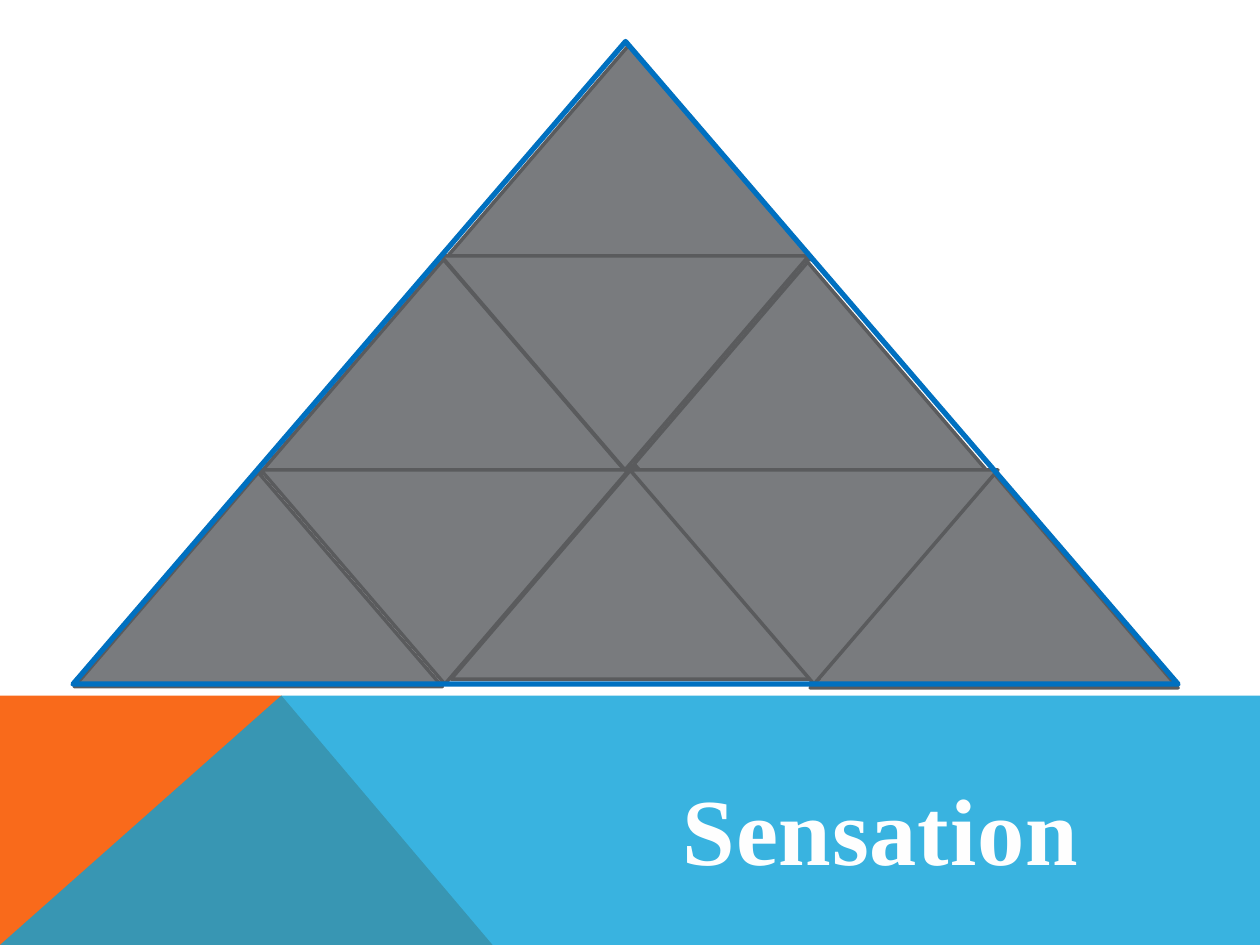
from lxml.etree import SubElement
from pptx import Presentation
from pptx.dml.color import RGBColor
from pptx.enum.shapes import MSO_SHAPE
from pptx.enum.text import MSO_ANCHOR, MSO_AUTO_SIZE, PP_ALIGN
from pptx.oxml.ns import qn
from pptx.util import Pt

COLORS = {
    "orange": "F96A1B",
    "sky": "08A1D9",
    "gray": "797B7E",
    "edge": "5A5B5D",
    "outline": "0070C0",
    "title": "FEFEFE",
    "shadow": "000000",
}
SLIDE_WIDTH, SLIDE_HEIGHT = 720, 540
BAND_TOP, BAND_PEAK = 397.44, 160.8
TILE_SIZE = (210.24, 122.4)
UPRIGHT_TILES = [
    (254.16, 25.92),
    (356.4, 149.76),
    (148.32, 148.32),
    (462.96, 270.72),
    (257.76, 265.68),
    (42.48, 270),
]
INVERTED_TILES = [(360, 268.56), (149.04, 268.56), (252, 146.16)]
TITLE_BOX = {
    "left": Pt(381.6),
    "top": Pt(436.32),
    "width": Pt(243.36),
    "height": Pt(72.72),
}
TITLE_FRAME = {
    "word_wrap": False,
    "auto_size": MSO_AUTO_SIZE.NONE,
    "vertical_anchor": MSO_ANCHOR.BOTTOM,
}
TITLE_PARAGRAPH = {"alignment": PP_ALIGN.CENTER, "space_before": Pt(0)}
TITLE_FONT = {"name": "Times New Roman", "size": Pt(54), "bold": True}


def apply_format(target, values):
    for name, value in values.items():
        setattr(target, name, value)


def rgb(color):
    return RGBColor.from_string(COLORS[color])


def set_alpha(color_element, percent):
    SubElement(color_element, qn("a:alpha"), val=str(percent * 1000))


def paint(shape, color):
    shape.fill.solid()
    shape.fill.fore_color.rgb = rgb(color)


def add_band(slide, corners, color, opacity=100):
    points = [(Pt(x), Pt(y)) for x, y in corners]
    builder = slide.shapes.build_freeform(*points[0])
    builder.add_line_segments(points[1:], close=True)
    band = builder.convert_to_shape()
    band.shadow.inherit = False
    paint(band, color)
    band.line.fill.background()
    if opacity < 100:
        set_alpha(band.element.find(".//" + qn("a:srgbClr")), opacity)


def add_triangle(slide, position, size, edge, weight, fill=None, rotation=0):
    box = [Pt(length) for length in (*position, *size)]
    triangle = slide.shapes.add_shape(MSO_SHAPE.ISOSCELES_TRIANGLE, *box)
    triangle.shadow.inherit = False
    triangle.rotation = rotation
    if fill:
        paint(triangle, fill)
    else:
        triangle.fill.background()
    triangle.line.color.rgb = rgb(edge)
    triangle.line.width = Pt(weight)


def add_text_shadow(run_properties):
    effects = run_properties.makeelement(qn("a:effectLst"))
    run_properties.find(qn("a:solidFill")).addnext(effects)
    shadow = SubElement(
        effects, qn("a:outerShdw"), blurRad="38100", dist="25400", dir="2700000"
    )
    set_alpha(SubElement(shadow, qn("a:srgbClr"), val=COLORS["shadow"]), 30)


def add_title(slide, text):
    title = slide.shapes.title
    apply_format(title, TITLE_BOX)
    apply_format(title.text_frame, TITLE_FRAME)
    paragraph = title.text_frame.paragraphs[0]
    apply_format(paragraph, TITLE_PARAGRAPH)
    run = paragraph.add_run()
    run.text = text
    apply_format(run.font, TITLE_FONT)
    run.font.color.rgb = rgb("title")
    run_properties = title.element.find(".//" + qn("a:rPr"))
    run_properties.set("spc", "50")
    add_text_shadow(run_properties)
    slide.shapes.element.append(title.element)


def main():
    deck = Presentation()
    apply_format(
        deck, {"slide_width": Pt(SLIDE_WIDTH), "slide_height": Pt(SLIDE_HEIGHT)}
    )
    slide = deck.slides.add_slide(deck.slide_layouts.get_by_name("Title Only"))

    bottom_left, peak = (0, SLIDE_HEIGHT), (BAND_PEAK, BAND_TOP)
    add_band(
        slide,
        [bottom_left, (0, BAND_TOP), peak, (281.52, SLIDE_HEIGHT)],
        "orange",
    )
    add_band(
        slide,
        [bottom_left, peak, (SLIDE_WIDTH, BAND_TOP), (SLIDE_WIDTH, SLIDE_HEIGHT)],
        "sky",
        opacity=80,
    )
    for tiles, rotation in ((UPRIGHT_TILES, 0), (INVERTED_TILES, 180)):
        for position in tiles:
            add_triangle(slide, position, TILE_SIZE, "edge", 2, "gray", rotation)
    add_triangle(slide, (41.76, 23.76), (631.44, 367.2), "outline", 3)
    add_title(slide, "Sensation")
    deck.save("out.pptx")


if __name__ == "__main__":
    main()
